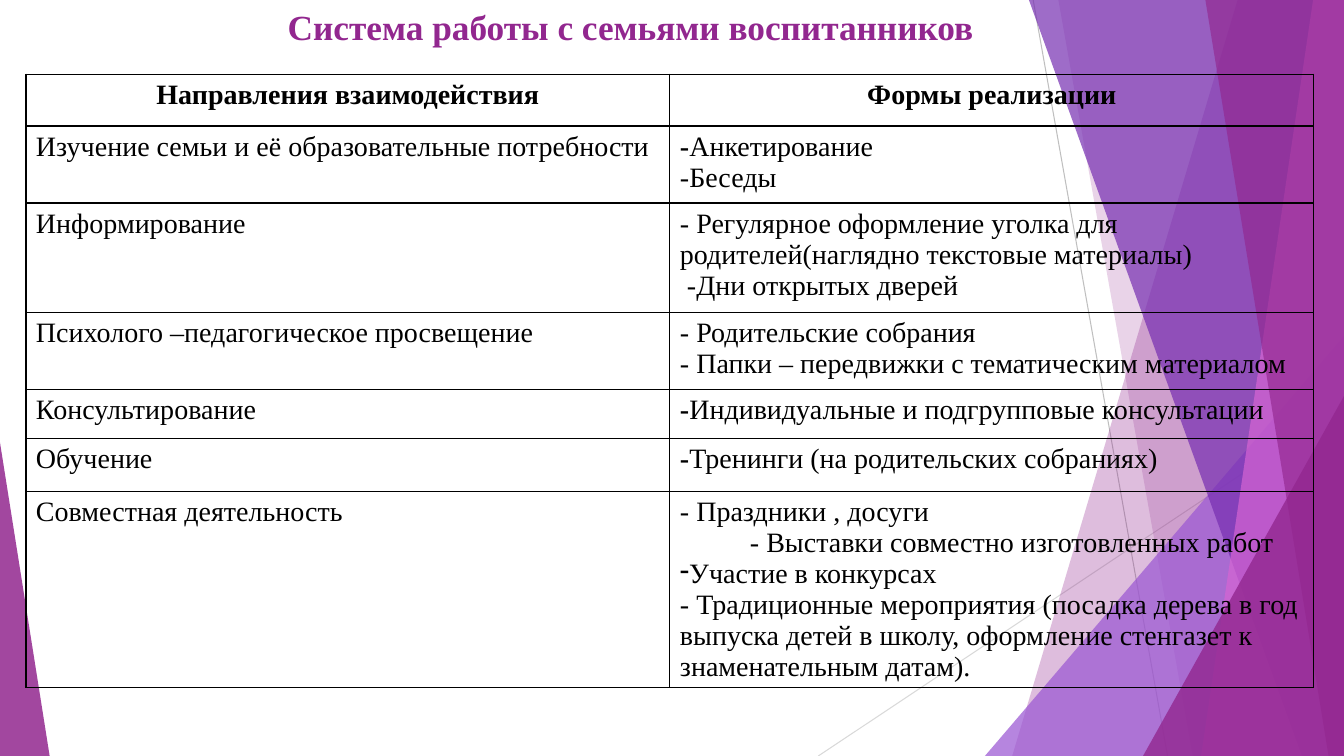
from lxml import etree
from pptx import Presentation
from pptx.dml.color import RGBColor
from pptx.enum import shapes, text
from pptx.oxml import parse_xml
from pptx.oxml.ns import nsdecls, qn
from pptx.util import Pt

PLUM = RGBColor(0x92, 0x27, 0x8F)
VIOLET = RGBColor(0x76, 0x2E, 0xB1)
LILAC = RGBColor(0x9B, 0x57, 0xD3)
PINK = RGBColor(0xD6, 0x65, 0xD3)
GREY = RGBColor(0xBF, 0xBF, 0xBF)
PALE = RGBColor(0xD9, 0xD9, 0xD9)
BLACK = RGBColor(0, 0, 0)
FACE = "Times New Roman"
WIDE, HIGH = 960, 540

deck = Presentation()
deck.slide_width, deck.slide_height = Pt(WIDE), Pt(HIGH)
slide = deck.slides.add_slide(deck.slide_layouts[5])
items = slide.shapes


def tint(shape, color, alpha):
    """Fill a facet with a see-through colour and no outline."""
    shape.shadow.inherit = False
    shape.line.fill.background()
    shape.fill.solid()
    shape.fill.fore_color.rgb = color
    clr = shape.fill._xPr.find(".//" + qn("a:srgbClr"))
    etree.SubElement(clr, qn("a:alpha")).set("val", str(alpha * 1000))


def wedge(left, top, width, peak, color, alpha):
    """Add a triangle that stands on the bottom edge."""
    shape = items.add_shape(shapes.MSO_SHAPE.ISOSCELES_TRIANGLE, Pt(left),
                            Pt(top), Pt(width), Pt(HIGH - top))
    shape.adjustments[0] = peak
    tint(shape, color, alpha)


# Thin background lines
for x1, y1, x2, color in [(738, 0, 834, GREY), (WIDE, 290, 584.5, PALE)]:
    line = items.add_connector(shapes.MSO_CONNECTOR.STRAIGHT,
                               Pt(x1), Pt(y1), Pt(x2), Pt(HIGH))
    line.line.color.rgb = color
    line.line.width = Pt(0.75)
    etree.SubElement(line.element.spPr, qn("a:effectLst"))

# Facets along the right edge: top x, bottom x, colour, opacity
facets = [(884, 723, PLUM, 30), (756, 852, PLUM, 20), None,
          (735, 929.5, VIOLET, 70), (938, 858, PINK, 70),
          (861, 949, PLUM, 65)]
for facet in facets:
    if facet is None:
        wedge(703.5, 240, 256.5, 1, LILAC, 72)
        continue
    top, base, color, alpha = facet
    pen = items.build_freeform(top, 0, scale=Pt(1))
    pen.add_line_segments([(WIDE, 0), (WIDE, HIGH), (base, HIGH)])
    tint(pen.convert_to_shape(), color, alpha)
wedge(816.5, 283, 143.5, 1, PLUM, 80)
wedge(0, 316, 35.5, 0, PLUM, 85)

# Title
title = items.title
title.left, title.top, title.width, title.height = Pt(112), Pt(0), Pt(677), Pt(63)
frame = title.text_frame
frame.text = "Система работы с семьями воспитанников"
frame.vertical_anchor = text.MSO_ANCHOR.TOP
frame.auto_size = text.MSO_AUTO_SIZE.NONE
head = frame.paragraphs[0]
head.alignment = text.PP_ALIGN.CENTER
head.font.name, head.font.size, head.font.bold = FACE, Pt(25.2), True
head.font.color.rgb = PLUM
title.element.getparent().append(title.element)

# Table rows: height, direction, forms ("*" bold dash, "•" dash bullet, ">" indent)
rows = [
    (37, "Направления взаимодействия", ["Формы реализации"]),
    (55, "Изучение семьи и её образовательные потребности",
     ["*Анкетирование", "-Беседы"]),
    (78, "Информирование",
     ["- Регулярное оформление уголка для родителей(наглядно текстовые материалы)",
      " -Дни открытых дверей"]),
    (55, "Психолого –педагогическое просвещение",
     ["- Родительские собрания",
      "- Папки – передвижки с тематическим материалом"]),
    (35, "Консультирование", ["*Индивидуальные и подгрупповые консультации"]),
    (38, "Обучение", ["*Тренинги (на родительских собраниях)"]),
    (140, "Совместная деятельность",
     ["- Праздники , досуги", ">- Выставки совместно изготовленных работ",
      "•Участие в конкурсах",
      "- Традиционные мероприятия (посадка дерева в год выпуска детей в школу, "
      "оформление стенгазет к знаменательным датам)."]),
]
table = items.add_table(len(rows), 2, Pt(18.5), Pt(53), Pt(920),
                        Pt(sum(row[0] for row in rows))).table
table.horz_banding = False
for col in table.columns:
    col.width = Pt(460)

for r, (tall, topic, forms) in enumerate(rows):
    table.rows[r].height = Pt(tall)
    for c, lines in enumerate([[topic], forms]):
        cell = table.cell(r, c)
        props = cell._tc.get_or_add_tcPr()
        for side in "LRTB":
            props.append(parse_xml(
                f'<a:ln{side} {nsdecls("a")} w="12700"><a:solidFill>'
                f'<a:srgbClr val="{BLACK}"/></a:solidFill></a:ln{side}>'))
        cell.fill.background()
        for n, words in enumerate(lines):
            para = (cell.text_frame.add_paragraph() if n
                    else cell.text_frame.paragraphs[0])
            font = para.font
            font.name, font.size, font.bold = FACE, Pt(20), r == 0
            font.color.rgb = BLACK
            para.alignment = text.PP_ALIGN.LEFT if r else text.PP_ALIGN.CENTER
            mark = words[0]
            if mark == "*":
                dash = para.add_run()
                dash.text, dash.font.bold = "-", True
            elif mark == "•":
                bullet = parse_xml(f'<a:buChar {nsdecls("a")} char="-"/>')
                para._p.get_or_add_pPr().insert(0, bullet)
            elif mark == ">":
                para._p.get_or_add_pPr().set("marL", str(Pt(50)))
            para.add_run().text = words[1:] if mark in "*•>" else words

deck.save("out.pptx")
